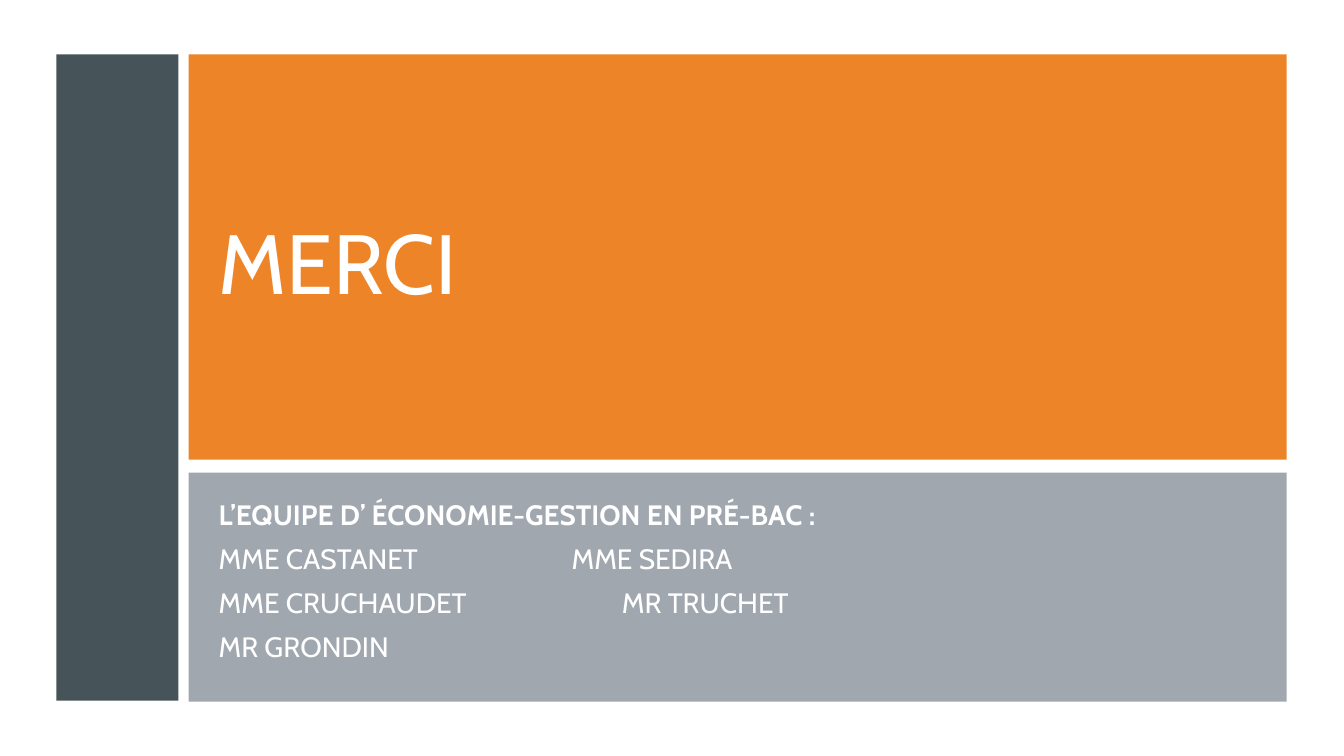
from lxml.etree import SubElement
from pptx import Presentation
from pptx.dml.color import RGBColor
from pptx.enum.shapes import MSO_SHAPE
from pptx.enum.text import MSO_ANCHOR, MSO_AUTO_SIZE, PP_ALIGN
from pptx.oxml.ns import qn
from pptx.util import Inches, Pt

WHITE = RGBColor(0xFF, 0xFF, 0xFF)
SLATE = RGBColor(0x46, 0x53, 0x59)
ORANGE = RGBColor(0xED, 0x84, 0x28)
GREY = RGBColor(0x89, 0x92, 0x9B)

# Text of each line, bold or not, tab stop of its second column in inches
TEAM = [
    ("L’EQUIPE D’\u00a0ÉCONOMIE-GESTION EN PRÉ-BAC :".replace("\u00a0", " "), True, None),
    ("MME CASTANET\tMME SEDIRA", False, 3.5),
    ("MME CRUCHAUDET\tMR TRUCHET", False, 4),
    ("MR GRONDIN", False, None),
]


class ClosingSlide:
    font = "Cabin"
    title_size = Pt(60)
    body_size = Pt(20)

    def __init__(self, prs):
        self.s = prs.slides.add_slide(prs.slide_layouts[5])
        fill = self.s.background.fill
        fill.solid()
        fill.fore_color.rgb = WHITE

    def panel(self, x, y, w, h, color, opacity=100):
        sp = self.s.shapes.add_shape(
            MSO_SHAPE.RECTANGLE, Inches(x), Inches(y), Inches(w), Inches(h))
        sp.shadow.inherit = False
        sp.fill.solid()
        sp.fill.fore_color.rgb = color
        sp.line.fill.background()
        if opacity < 100:
            clr = sp.element.spPr.find(qn("a:solidFill"))[0]
            SubElement(clr, qn("a:alpha")).set("val", str(opacity * 1000))

    def run(self, p, text, size, bold=False):
        p.alignment = PP_ALIGN.LEFT
        r = p.add_run()
        r.text = text
        r.font.name = self.font
        r.font.size = size
        r.font.bold = bold
        r.font.color.rgb = WHITE

    def title(self, x, y, w, h, text):
        sp = self.s.shapes.title
        sp.left, sp.top, sp.width, sp.height = (Inches(v) for v in (x, y, w, h))
        # Bring the title in front of its panel
        sp.element.getparent().append(sp.element)
        tf = sp.text_frame
        tf.auto_size = MSO_AUTO_SIZE.NONE
        tf.vertical_anchor = MSO_ANCHOR.MIDDLE
        self.run(tf.paragraphs[0], text, self.title_size)

    def tab_stop(self, p, pos):
        tabs = SubElement(p._p.get_or_add_pPr(), qn("a:tabLst"))
        tab = SubElement(tabs, qn("a:tab"))
        tab.set("pos", str(Inches(pos)))
        tab.set("algn", "l")

    def names(self, x, y, w, h, lines):
        tf = self.s.shapes.add_textbox(
            Inches(x), Inches(y), Inches(w), Inches(h)).text_frame
        tf.word_wrap = True
        for i, (text, bold, stop) in enumerate(lines):
            p = tf.add_paragraph() if i else tf.paragraphs[0]
            p.line_spacing = 0.9
            p.space_before = Pt(4)
            p.space_after = Pt(6)
            self.run(p, text, self.body_size, bold)
            if stop:
                self.tab_stop(p, stop)


def main():
    prs = Presentation()
    prs.slide_width, prs.slide_height = Inches(13.33), Inches(7.5)
    slide = ClosingSlide(prs)

    # Side band
    slide.panel(0.56, 0.54, 1.21, 6.41, SLATE)

    # Thanks
    slide.panel(1.87, 0.54, 10.89, 4.02, ORANGE)
    slide.title(2.07, 0.77, 8.28, 3.64, "MERCI")

    # Teaching team
    slide.panel(1.87, 4.69, 10.89, 2.27, GREY, opacity=80)
    slide.names(2.07, 4.92, 10.61, 1.79, TEAM)

    prs.save("out.pptx")


if __name__ == "__main__":
    main()
